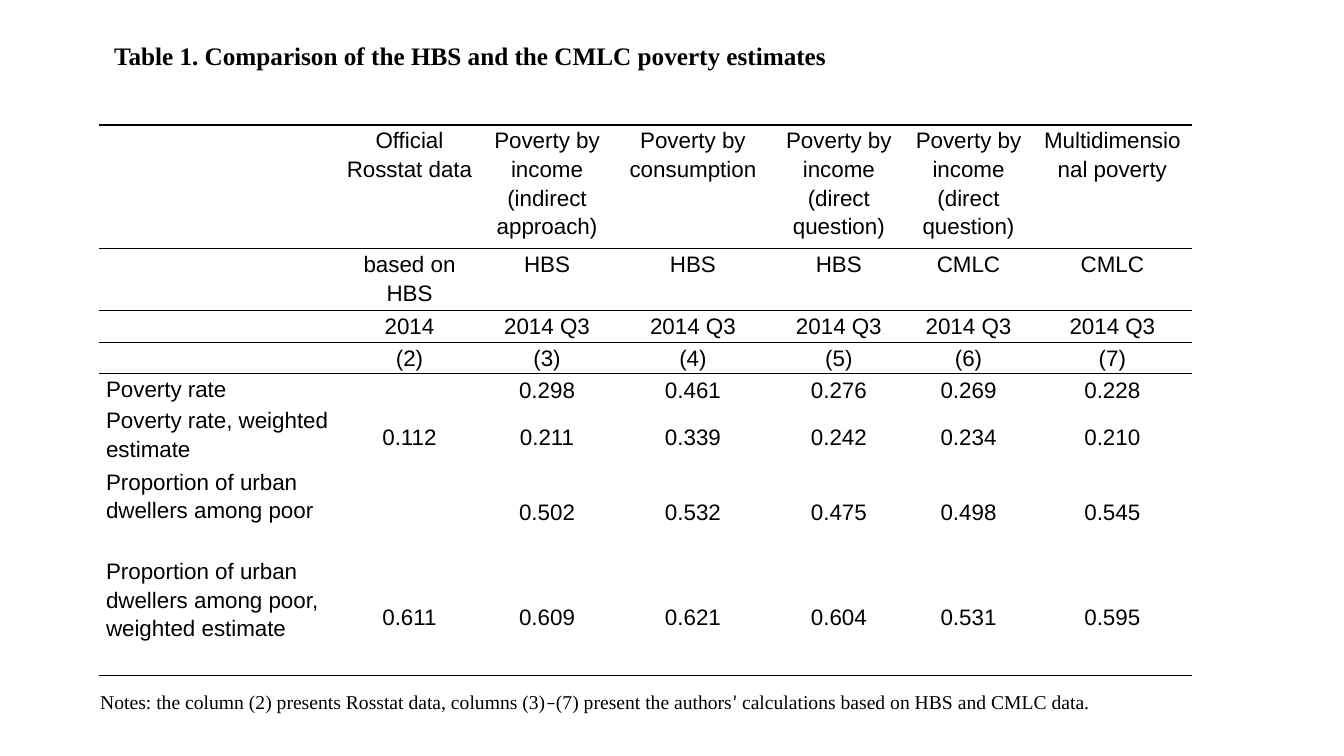
import pptx
import pptx.util
import pptx.dml.color
import pptx.enum.text
import pptx.oxml
import pptx.oxml.ns
import lxml.etree

PX = 9525
COLORS = {"ink": "000000"}
ALIGN = pptx.enum.text.PP_ALIGN
ANCHOR = pptx.enum.text.MSO_ANCHOR
AUTO = pptx.enum.text.MSO_AUTO_SIZE

COL_WIDTHS = [227, 138, 124, 154, 124, 123, 151]
ROW_HEIGHTS = [114, 56, 31, 27, 27, 56, 85, 114]
HEADER_ROWS = 4
ROWS = [
    ["", "Official Rosstat data", "Poverty by income (indirect approach)",
     "Poverty by consumption", "Poverty by income (direct question)",
     "Poverty by income (direct question)", "Multidimensional poverty"],
    ["", "based on HBS"] + ["HBS"] * 3 + ["CMLC"] * 2,
    ["", "2014"] + ["2014 Q3"] * 5,
    [""] + [f"({n})" for n in range(2, 8)],
    ["Poverty rate", "", "0.298", "0.461", "0.276", "0.269", "0.228"],
    ["Poverty rate, weighted estimate",
     "0.112", "0.211", "0.339", "0.242", "0.234", "0.210"],
    ["Proportion of urban dwellers among poor",
     "", "0.502", "0.532", "0.475", "0.498", "0.545"],
    ["Proportion of urban dwellers among poor, weighted estimate",
     "0.611", "0.609", "0.621", "0.604", "0.531", "0.595"],
]
NOTES = [
    ("Notes: the column (2) presents Rosstat data, columns (3)", "Times New Roman"),
    ("–", "Calibri"),
    ("(7) present the authors", "Times New Roman"),
    ("’", "Calibri"),
    (" calculations based on HBS and CMLC data.", "Times New Roman"),
]


def px(n):
    return pptx.util.Emu(n * PX)


def style(p, size, align, name=None, bold=False):
    p.alignment = align
    p.font.size = pptx.util.Pt(size)
    p.font.bold = bold
    p.font.color.rgb = pptx.dml.color.RGBColor.from_string(COLORS["ink"])
    if name:
        p.font.name = name


def set_borders(cell, ruled):
    tcPr = cell._tc.get_or_add_tcPr()
    qn = pptx.oxml.ns.qn
    for side in "LRTB":
        ln = lxml.etree.SubElement(tcPr, qn(f"a:ln{side}"), w=str(pptx.util.Pt(1)))
        if side in ruled:
            fill = lxml.etree.SubElement(ln, qn("a:solidFill"))
            lxml.etree.SubElement(fill, qn("a:srgbClr"), val=COLORS["ink"])
        else:
            lxml.etree.SubElement(ln, qn("a:noFill"))


def add_title(s, x, y, w, h):
    sp = s.shapes.title
    sp.left, sp.top, sp.width, sp.height = map(px, (x, y, w, h))
    tf = sp.text_frame
    tf.text = "Table 1. Comparison of the HBS and the CMLC poverty estimates"
    tf.word_wrap = True
    tf.auto_size = AUTO.SHAPE_TO_FIT_TEXT
    tf.vertical_anchor = ANCHOR.TOP
    style(tf.paragraphs[0], 18, ALIGN.JUSTIFY, "Times New Roman", True)


def add_estimates(s, x, y):
    table = s.shapes.add_table(
        len(ROWS), len(COL_WIDTHS), px(x), px(y),
        px(sum(COL_WIDTHS)), px(sum(ROW_HEIGHTS))).table
    table.first_row = False
    table.horz_banding = False
    for col, width in zip(table.columns, COL_WIDTHS):
        col.width = px(width)
    for i, (row, height) in enumerate(zip(ROWS, ROW_HEIGHTS)):
        table.rows[i].height = px(height)
        ruled = ("T" if i <= HEADER_ROWS else "") + (
            "B" if i < HEADER_ROWS or i == len(ROWS) - 1 else "")
        for j, text in enumerate(row):
            cell = table.cell(i, j)
            cell.text = text
            cell.margin_left = cell.margin_right = px(7)
            cell.margin_top = cell.margin_bottom = 0
            is_value = i >= HEADER_ROWS and j > 0
            cell.vertical_anchor = ANCHOR.MIDDLE if is_value else ANCHOR.TOP
            set_borders(cell, ruled)
            cell.fill.background()
            p = cell.text_frame.paragraphs[0]
            p.line_spacing = 1.15
            style(p, 16, ALIGN.CENTER if j else ALIGN.LEFT, "Arial")


def add_notes(s, x, y, w, h):
    tf = s.shapes.add_textbox(px(x), px(y), px(w), px(h)).text_frame
    tf.word_wrap = False
    tf.auto_size = AUTO.SHAPE_TO_FIT_TEXT
    tf.vertical_anchor = ANCHOR.MIDDLE
    p = tf.paragraphs[0]
    style(p, 14, ALIGN.JUSTIFY)
    for text, name in NOTES:
        r = p.add_run()
        r.text = text
        r.font.name = name


def main():
    prs = pptx.Presentation()
    prs.slide_width, prs.slide_height = px(1280), px(720)
    s = prs.slides.add_slide(prs.slide_layouts.get_by_name("Title Only"))
    add_title(s, 99, 34, 923, 38)
    add_estimates(s, 94, 119)
    add_notes(s, 86, 652, 970, 33)
    prs.save("out.pptx")


if __name__ == "__main__":
    main()
